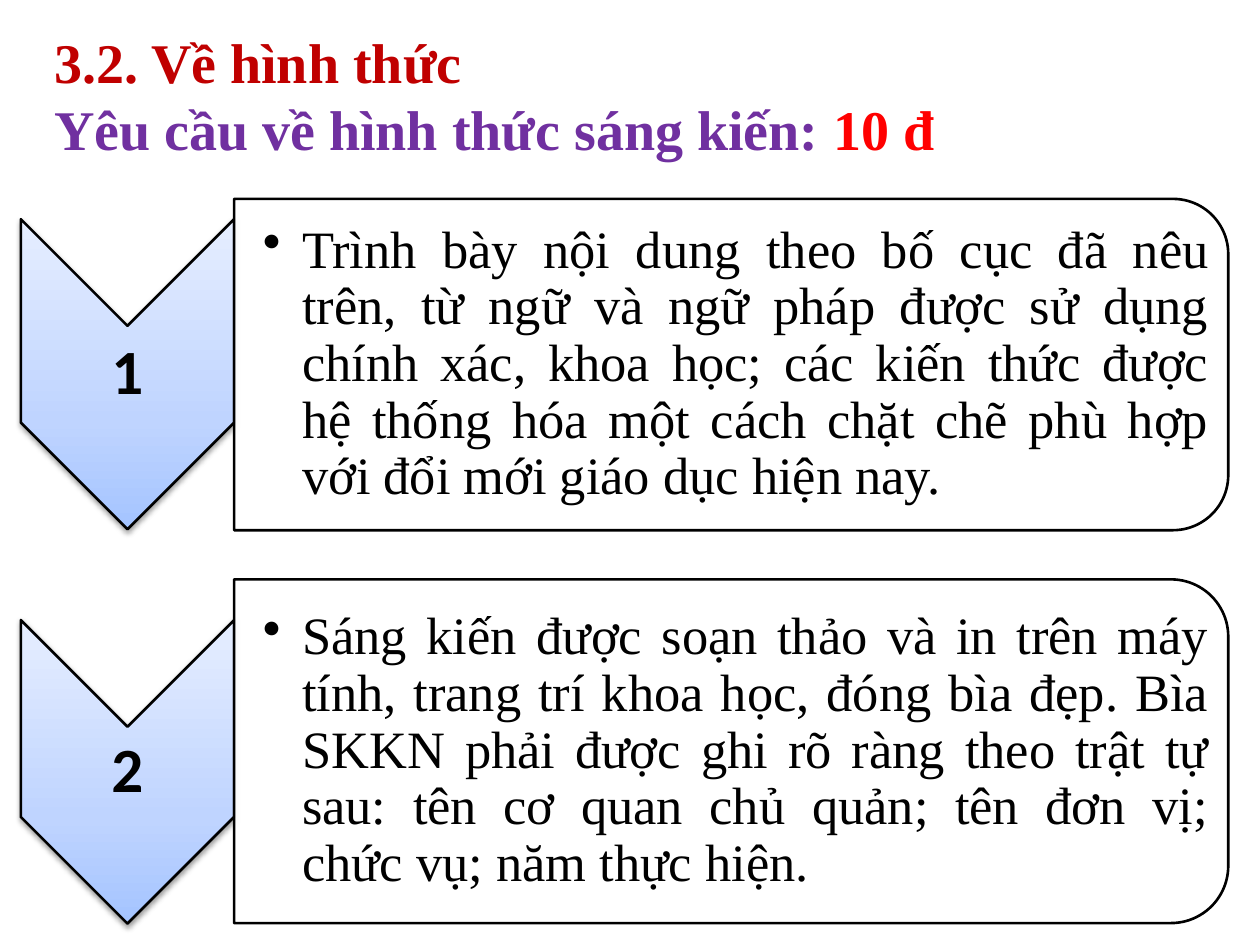
from lxml import etree
from pptx import Presentation
from pptx import util as u
from pptx.dml.color import RGBColor
from pptx.enum import shapes, text
from pptx.oxml import ns, parse_xml

SERIF = "Times New Roman"
STEPS = [
    ("1", 4.42, 6.25, 4.01, 6.68,
     "Trình bày nội dung theo bố cục đã nêu trên, từ ngữ và ngữ pháp được sử dụng "
     "chính xác, khoa học; các kiến thức được hệ thống hóa một cách chặt chẽ phù hợp "
     "với đổi mới giáo dục hiện nay."),
    ("2", 12.5, 6.12, 11.68, 6.93,
     "Sáng kiến được soạn thảo và in trên máy tính, trang trí khoa học, đóng bìa đẹp. "
     "Bìa SKKN phải được ghi rõ ràng theo trật tự sau: tên cơ quan chủ quản; "
     "tên đơn vị; chức vụ; năm thực hiện."),
]


def color(value):
    """Turn a hex string into a colour."""
    return RGBColor.from_string(value)


def style(font, size, name, value, bold=False):
    """Set the size, face, colour and weight of a font."""
    font.size, font.name, font.bold = u.Pt(size), name, bold
    font.color.rgb = color(value)


def add_turned(page, kind, left, top, width, height):
    """Add a preset turned by 90 degrees that fills the given upright area."""
    shift = (width - height) / 2
    shape = page.shapes.add_shape(kind, u.Cm(left + shift), u.Cm(top - shift),
                                  u.Cm(height), u.Cm(width))
    shape.rotation = 90
    shape.shadow.inherit = False
    shape.line.color.rgb = color("000000")
    shape.line.width = u.Pt(1.5)
    return shape


def add_text(page, left, top, width, height, insets):
    """Add a wrapped, vertically centred text box and return its paragraph."""
    box = page.shapes.add_textbox(u.Cm(left), u.Cm(top), u.Cm(width), u.Cm(height))
    frame = box.text_frame
    frame.word_wrap = True
    frame.vertical_anchor = text.MSO_ANCHOR.MIDDLE
    (frame.margin_left, frame.margin_top,
     frame.margin_right, frame.margin_bottom) = map(u.Cm, insets)
    para = frame.paragraphs[0]
    para.line_spacing = 0.9
    return para


def add_arrow(page, number, top, height):
    """Add a downward chevron with a gradient, a soft shadow and its number."""
    left, width = 0.42, 4.3
    arrow = add_turned(page, shapes.MSO_SHAPE.CHEVRON, left, top, width, height)
    arrow.fill.background()
    props = arrow.fill._xPr
    stops = "".join(
        f'<a:gs pos="{place}000"><a:srgbClr val="{value}"/></a:gs>'
        for place, value in ((0, "A4C4FF"), (35, "BFD4FF"), (100, "E6EEFF")))
    gradient = parse_xml(
        f'<a:gradFill {ns.nsdecls("a")} rotWithShape="0"><a:gsLst>{stops}</a:gsLst>'
        '<a:lin ang="16200000" scaled="0"/></a:gradFill>')
    props.replace(props.find(ns.qn("a:noFill")), gradient)
    props.find(ns.qn("a:effectLst")).append(parse_xml(
        f'<a:outerShdw {ns.nsdecls("a")} blurRad="40000" dist="20000" dir="5400000" '
        'rotWithShape="0"><a:srgbClr val="000000"><a:alpha val="38000"/></a:srgbClr>'
        '</a:outerShdw>'))
    para = add_text(page, left, top + height / 2 - 0.95, width, 1.9, [0.08] * 4)
    para.text = number
    para.alignment = text.PP_ALIGN.CENTER
    style(para.font, 36, "Calibri", "000000", True)


def add_card(page, wording, top, height):
    """Add a card rounded on its right side with one justified bullet."""
    left, width = 4.72, 20.04
    card = add_turned(page, shapes.MSO_SHAPE.ROUND_2_SAME_RECTANGLE,
                      left, top, width, height)
    card.fill.solid()
    card.fill.fore_color.rgb = color("FFFFFF")
    white = card.fill._xPr.find(ns.qn("a:solidFill"))[0]
    etree.SubElement(white, ns.qn("a:alpha"), val="90000")
    para = add_text(page, left, top + 0.33, 19.71, height - 0.66,
                    (0.58, 0.05, 0.05, 0.05))
    para.text = wording
    para.alignment = text.PP_ALIGN.JUSTIFY
    style(para.font, 30, SERIF, "000000")
    props = para._p.get_or_add_pPr()
    indent = u.Cm(0.79)
    props.set("marL", str(indent))
    props.set("indent", str(-indent))
    bullet = parse_xml(f'<a:buChar {ns.nsdecls("a")} char="•"/>')
    props.find(ns.qn("a:defRPr")).addprevious(bullet)


def add_heading(page):
    """Add the two heading lines."""
    box = page.shapes.add_textbox(u.Cm(0.84), u.Cm(0.43), u.Cm(23.93), u.Cm(3))
    frame = box.text_frame
    frame.word_wrap = True
    lines = [[("3.2. Về hình thức", "C00000")],
             [("Yêu cầu về hình thức sáng kiến: ", "7030A0"), ("10 đ", "FF0000")]]
    for index, line in enumerate(lines):
        para = frame.add_paragraph() if index else frame.paragraphs[0]
        for wording, value in line:
            span = para.add_run()
            span.text = wording
            style(span.font, 32, SERIF, value, True)


def main():
    """Build the slide and save it."""
    deck = Presentation()
    deck.slide_width, deck.slide_height = u.Cm(25.4), u.Cm(19.05)
    page = deck.slides.add_slide(deck.slide_layouts[6])
    add_heading(page)
    for number, arrow_top, arrow_height, card_top, card_height, wording in STEPS:
        add_arrow(page, number, arrow_top, arrow_height)
        add_card(page, wording, card_top, card_height)
    deck.save("out.pptx")


if __name__ == "__main__":
    main()
